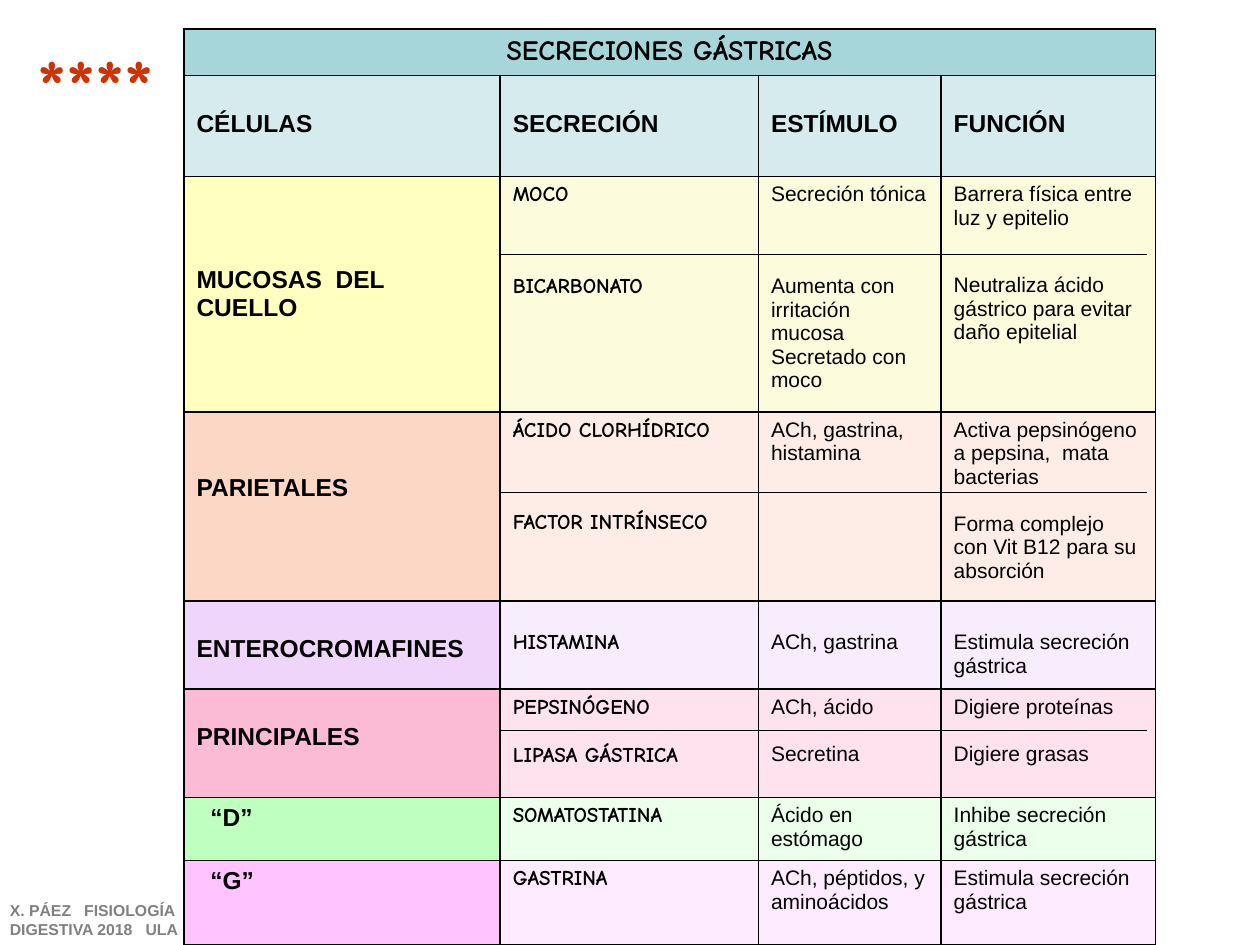
"""Build a slide with a table of gastric secretions by cell type."""
from lxml.etree import SubElement, fromstring
from pptx import Presentation
from pptx.dml.color import RGBColor
from pptx.enum.shapes import MSO_CONNECTOR
from pptx.enum.text import PP_ALIGN
from pptx.oxml.ns import qn
from pptx.util import Inches, Pt

THEME = {
    "sans": "Arial", "hand": "Comic Neue",
    "ink": "000000", "accent": "CC3300", "muted": "808080",
    "title": 16, "label": 14, "body": 12, "stars": 44, "footer": 9,
    "border": 1, "rule": 0.75,
}
A = "http://schemas.openxmlformats.org/drawingml/2006/main"
SHADOW = (f'<a:effectLst xmlns:a="{A}"><a:outerShdw blurRad="38100" dist="38100" dir="2700000">'
          '<a:srgbClr val="000000"/></a:outerShdw></a:effectLst>')

TITLE, TITLE_FILL = "SECRECIONES GÁSTRICAS", "A6D6DA"
HEADERS, HEADER_FILL = ["CÉLULAS", "SECRECIÓN", "ESTÍMULO", "FUNCIÓN"], "D5EBED"
TABLE_POS = (1.46, 0.23)
COLS = [2.51, 2.05, 1.45, 1.7]
TITLE_H, HEADER_H = 0.37, 0.8
LABEL_LINE = 16
INDENT = 0.21

# Each cell lists (points of space above, paragraph).
ROWS = [
    {"height": 1.87, "fills": ("FFFFBF", "FCFBDC"), "cells": [
        [(48, "MUCOSAS  DEL CUELLO")],
        [(0, "MOCO"), (39, "BICARBONATO")],
        [(0, "Secreción tónica"), (39, "Aumenta con irritación mucosa"), (0, "Secretado con moco")],
        [(0, "Barrera física entre luz y epitelio"),
         (25, "Neutraliza ácido gástrico para evitar daño epitelial")]]},
    {"height": 1.5, "fills": ("FCD7C6", "FEEDE6"), "cells": [
        [(32, "PARIETALES")],
        [(0, "ÁCIDO CLORHÍDRICO"), (39, "FACTOR INTRÍNSECO")],
        [(0, "ACh, gastrina, histamina")],
        [(0, "Activa pepsinógeno"), (0, "a pepsina,  mata bacterias"),
         (13.5, "Forma complejo con Vit B12 para su absorción")]]},
    {"height": 0.7, "fills": ("F0D5FB", "F8EDFD"), "cells": [
        [(16, "ENTEROCROMAFINES")], [(13.5, "HISTAMINA")],
        [(13.5, "ACh, gastrina")], [(13.5, "Estimula secreción gástrica")]]},
    {"height": 0.86, "fills": ("FBBBD5", "FEE2ED"), "cells": [
        [(16, "PRINCIPALES")],
        [(0, "PEPSINÓGENO"), (13.5, "LIPASA GÁSTRICA")],
        [(0, "ACh, ácido"), (13.5, "Secretina")],
        [(0, "Digiere proteínas"), (13.5, "Digiere grasas")]]},
    {"height": 0.5, "fills": ("BFFFBF", "EBFFEB"), "indent": INDENT, "cells": [
        [(0, "“D”")], [(0, "SOMATOSTATINA")],
        [(0, "Ácido en estómago")], [(0, "Inhibe secreción gástrica")]]},
    {"height": 0.67, "fills": ("FFC3FF", "FFEBFF"), "indent": INDENT, "cells": [
        [(0, "“G”")], [(0, "GASTRINA")],
        [(0, "ACh, péptidos, y aminoácidos")], [(0, "Estimula secreción gástrica")]]},
]
RULES_Y, RULE_X = [2.02, 3.91, 5.8], (3.98, 9.1)
STARS = "****"
FOOTER = ["X. PÁEZ   FISIOLOGÍA", "DIGESTIVA 2018   ULA"]


def style(p, font, size, bold, color="ink"):
    for r in p.runs:
        r.font.name = THEME[font]
        r.font.size = Pt(THEME[size])
        r.font.bold = bold
        r.font.color.rgb = RGBColor.from_string(THEME[color])


def fill_cell(cell, paras, look, color):
    cell.fill.solid()
    cell.fill.fore_color.rgb = RGBColor.from_string(color)
    tf = cell.text_frame
    tf.text = "\n".join(text for _, text in paras)
    cell.margin_top = Inches(0.05) + Pt(paras[0][0])
    for i, (p, (gap, _)) in enumerate(zip(tf.paragraphs, paras)):
        if i:
            p.space_before = Pt(gap)
        style(p, *look)


def add_borders(cell):
    tcPr = cell._tc.get_or_add_tcPr()
    for i, side in enumerate(("lnL", "lnR", "lnT", "lnB")):
        ln = fromstring(f'<a:{side} xmlns:a="{A}" w="{Pt(THEME["border"])}"><a:solidFill>'
                        f'<a:srgbClr val="{THEME["ink"]}"/></a:solidFill></a:{side}>')
        tcPr.insert(i, ln)


def add_table(s):
    heights = [TITLE_H, HEADER_H] + [row["height"] for row in ROWS]
    x, y = TABLE_POS
    tbl = s.shapes.add_table(len(heights), len(COLS), Inches(x), Inches(y),
                             Inches(sum(COLS)), Inches(sum(heights))).table
    for col, w in zip(tbl.columns, COLS):
        col.width = Inches(w)
    for row, h in zip(tbl.rows, heights):
        row.height = Inches(h)

    label, hand, body = ("sans", "label", True), ("hand", "body", True), ("sans", "body", False)
    title = tbl.cell(0, 0)
    title.merge(tbl.cell(0, len(COLS) - 1))
    fill_cell(title, [(0, TITLE)], ("hand", "title", True), TITLE_FILL)
    title.text_frame.paragraphs[0].alignment = PP_ALIGN.CENTER
    for c, text in enumerate(HEADERS):
        fill_cell(tbl.cell(1, c), [(LABEL_LINE, text)], label, HEADER_FILL)
    for r, row in enumerate(ROWS, 2):
        dark, light = row["fills"]
        looks = zip(row["cells"], (label, hand, body, body), (dark, light, light, light))
        for c, (paras, look, color) in enumerate(looks):
            fill_cell(tbl.cell(r, c), paras, look, color)
        tbl.cell(r, 0).margin_left = Inches(row.get("indent", 0.1))
    for cell in tbl.iter_cells():
        add_borders(cell)


def add_rule(s, y):
    x1, x2 = RULE_X
    ln = s.shapes.add_connector(MSO_CONNECTOR.STRAIGHT, Inches(x1), Inches(y), Inches(x2), Inches(y))
    ln.line.color.rgb = RGBColor.from_string(THEME["ink"])
    ln.line.width = Pt(THEME["rule"])
    SubElement(ln._element.spPr, qn("a:effectLst"))


def add_text(s, box, text, look, wrap):
    tf = s.shapes.add_textbox(*map(Inches, box)).text_frame
    tf.word_wrap = wrap
    tf.text = text
    for p in tf.paragraphs:
        style(p, *look)
    return tf.paragraphs[0]


def main():
    prs = Presentation()
    prs.slide_width, prs.slide_height = Inches(10), Inches(7.5)
    s = prs.slides.add_slide(prs.slide_layouts[6])
    add_table(s)
    for y in RULES_Y:
        add_rule(s, y)
    p = add_text(s, (-0.23, 0.25, 1.98, 0.84), STARS, ("hand", "stars", True, "accent"), True)
    p.alignment = PP_ALIGN.CENTER
    p.runs[0]._r.rPr.find(qn("a:solidFill")).addnext(fromstring(SHADOW))
    add_text(s, (-0.02, 7.1, 1.56, 0.4), "\n".join(FOOTER), ("sans", "footer", True, "muted"), False)
    prs.save("out.pptx")


if __name__ == "__main__":
    main()
